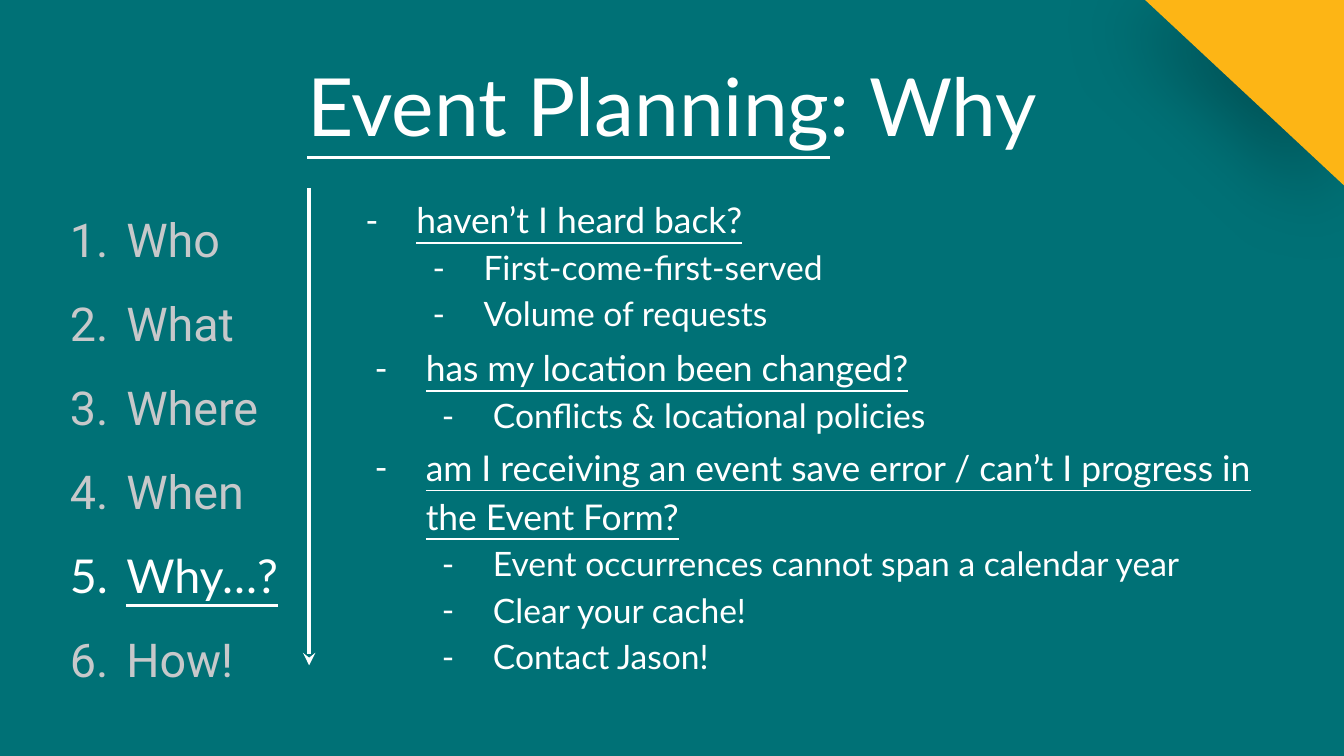
from lxml.etree import SubElement
from pptx import Presentation
from pptx.dml.color import RGBColor
from pptx.enum.shapes import MSO_CONNECTOR as Connector, MSO_SHAPE as Shape
from pptx.enum.text import MSO_ANCHOR as Anchor, MSO_AUTO_SIZE as AutoSize, PP_ALIGN as Align
from pptx.oxml.ns import qn
from pptx.util import Inches, Pt

TEAL, GOLD, WHITE, GREY = "007176", "FDB515", "FFFFFF", "C7C8CA"
STEPS = ["Who", "What", "Where", "When", "Why…?", "How!"]
CURRENT_STEP = "Why…?"
QUESTIONS = [
    ((2.5, 1.33, 7.16, 1.17), "haven’t I heard back?",
     ["First-come-first-served", "Volume of requests"]),
    ((2.57, 2.43, 7.16, 0.63), "has my location been changed?",
     ["Conflicts & locational policies"]),
    ((2.57, 3.17, 7.16, 1.04),
     "am I receiving an event save error / can’t I progress in the Event Form?",
     ["Event occurrences cannot span a calendar year", "Clear your cache!", "Contact Jason!"]),
]


def rgb(value):
    """Turn a hex string into a colour."""
    return RGBColor.from_string(value)


def add_node(parent, tag, **attributes):
    """Append an XML element with the given attributes."""
    return SubElement(parent, qn(tag), {key: str(value) for key, value in attributes.items()})


def place(holder, left, top, width, height):
    """Move a placeholder to its box, given in inches."""
    holder.left, holder.top = Inches(left), Inches(top)
    holder.width, holder.height = Inches(width), Inches(height)


def prepare_frame(frame):
    """Give a text frame even insets, wrapping and top alignment."""
    frame.word_wrap = True
    frame.auto_size = AutoSize.NONE
    frame.vertical_anchor = Anchor.TOP
    frame.margin_left = frame.margin_right = Inches(0.1)
    frame.margin_top = frame.margin_bottom = Inches(0.1)


def set_font(font, name, size, color, underline=None):
    """Set the look of a font."""
    font.name, font.size, font.underline = name, Pt(size), underline
    font.color.rgb = rgb(color)


def write_item(paragraph, text, font_name, size, color, underline, spacing, hanging,
               level=0, numbered=False):
    """Write one numbered or dashed list item."""
    paragraph.text = text
    paragraph.level = level
    paragraph.line_spacing = spacing
    paragraph.space_before = paragraph.space_after = Pt(0)
    properties = paragraph._p.get_or_add_pPr()
    properties.set("marL", str(Inches(0.5 * (level + 1))))
    properties.set("indent", str(-Inches(hanging)))
    add_node(add_node(properties, "a:buClr"), "a:srgbClr", val=color)
    add_node(properties, "a:buFont", typeface=font_name)
    if numbered:
        add_node(properties, "a:buAutoNum", type="arabicPeriod")
    else:
        add_node(properties, "a:buChar", char="-")
    set_font(paragraph.font, font_name, size, color, underline)


def next_paragraph(frame, index):
    """Return the first paragraph, or a new one after it."""
    return frame.add_paragraph() if index else frame.paragraphs[0]


def write_title(title):
    """Write the heading with its topic underlined."""
    place(title, 0.34, 0.32, 9.32, 0.63)
    prepare_frame(title.text_frame)
    heading = title.text_frame.paragraphs[0]
    heading.alignment = Align.CENTER
    set_font(heading.font, "Lato", 43, WHITE)
    for text, underline in (("Event Planning", True), (": Why", False)):
        part = heading.add_run()
        part.text = text
        part.font.underline = underline


def write_steps(body):
    """Write the numbered steps with the current one highlighted."""
    place(body, 0.34, 1.26, 2.11, 3.74)
    prepare_frame(body.text_frame)
    for index, step in enumerate(STEPS):
        current = step == CURRENT_STEP
        write_item(next_paragraph(body.text_frame, index), step,
                   "Lato" if current else "Roboto", 25, WHITE if current else GREY,
                   current, 1.5, 0.42, numbered=True)


def add_question(slide, box, question, answers):
    """Add an underlined question with its answers below."""
    frame = slide.shapes.add_textbox(*map(Inches, box)).text_frame
    prepare_frame(frame)
    for index, text in enumerate([question, *answers]):
        is_answer = index > 0
        write_item(next_paragraph(frame, index), text, "Lato", 18 if is_answer else 19,
                   WHITE, not is_answer, 1.15, 0.38, level=int(is_answer))


def add_progress_arrow(slide):
    """Add the downward arrow beside the steps."""
    arrow = slide.shapes.add_connector(
        Connector.STRAIGHT, Inches(2.3), Inches(1.4), Inches(2.3), Inches(4.95))
    arrow.line.color.rgb = rgb(WHITE)
    arrow.line.width = Pt(2.25)
    add_node(arrow.line._get_or_add_ln(), "a:tailEnd", type="stealth")
    add_node(arrow._element.spPr, "a:effectLst")


def add_corner(slide):
    """Add the gold corner triangle with its soft shadow."""
    corner = slide.shapes.add_shape(
        Shape.RIGHT_TRIANGLE, Inches(8.57), Inches(-0.05), Inches(1.38), Inches(1.48))
    corner.rotation = 270
    corner.fill.solid()
    corner.fill.fore_color.rgb = rgb(GOLD)
    corner.line.fill.background()
    corner.shadow.inherit = False
    properties = corner._element.spPr
    properties.find(qn("a:xfrm")).set("flipH", "1")
    shadow = add_node(properties.find(qn("a:effectLst")), "a:outerShdw", blurRad=Pt(45),
                      dist=Pt(15), dir=141 * 60000, algn="bl", rotWithShape=0)
    add_node(add_node(shadow, "a:srgbClr", val="000000"), "a:alpha", val=28000)


def main():
    """Build and save the slide."""
    deck = Presentation()
    deck.slide_width = Inches(10)
    deck.slide_height = deck.slide_width * 9 // 16
    slide = deck.slides.add_slide(deck.slide_layouts[1])
    slide.background.fill.solid()
    slide.background.fill.fore_color.rgb = rgb(TEAL)
    write_title(slide.shapes.title)
    write_steps(slide.placeholders[1])
    add_progress_arrow(slide)
    add_corner(slide)
    for box, question, answers in QUESTIONS:
        add_question(slide, box, question, answers)
    deck.save("out.pptx")


if __name__ == "__main__":
    main()
